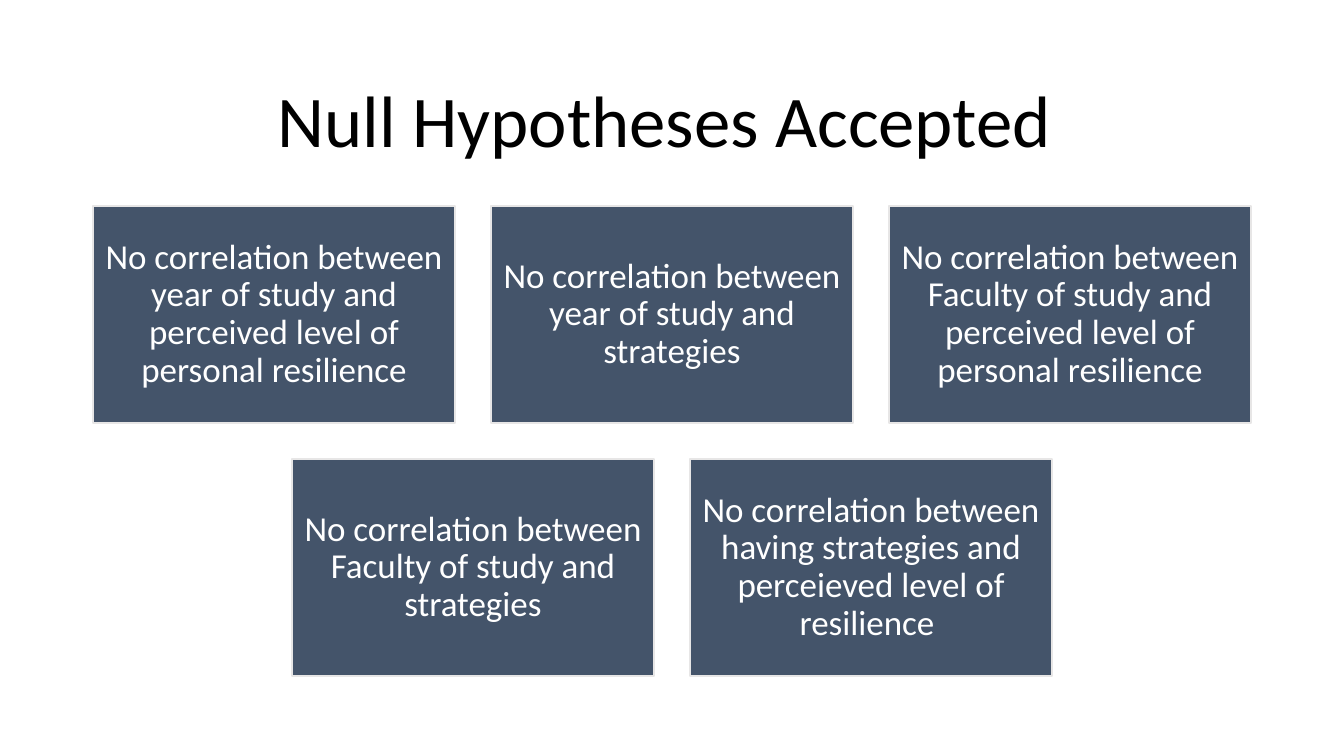
"""Build the slide of accepted null hypotheses as two centred rows of boxes."""
from pptx import Presentation
from pptx.dml.color import RGBColor
from pptx.enum.shapes import MSO_SHAPE as SHAPE
from pptx.enum.text import MSO_ANCHOR as ANCHOR, PP_ALIGN as ALIGN
from pptx.util import Pt

TITLE = "Null Hypotheses Accepted "
ROWS = [
    [
        "No correlation between year of study and perceived level of personal resilience",
        "No correlation between year of study and strategies",
        "No correlation between Faculty of study and perceived level of personal resilience",
    ],
    [
        "No correlation between Faculty of study and strategies",
        "No correlation between having strategies and perceieved level of resilience ",
    ],
]

BLACK = RGBColor(0x00, 0x00, 0x00)
WHITE = RGBColor(0xFF, 0xFF, 0xFF)
SLATE = RGBColor(0x44, 0x54, 0x6A)
PALE = RGBColor(0xE7, 0xE6, 0xE6)
FONT = "Calibri"

SLIDE_W, SLIDE_H = 1344, 756
TITLE_BOX = (93, 61, 1159, 125)
BOX_W, BOX_H, GAP, TOP, INSET = 362, 217, 36, 206, 10


def px(n):
    return round(n * 914400 / 100.8)


def write(sp, text, size, color):
    tf = sp.text_frame
    tf.word_wrap = True
    tf.vertical_anchor = ANCHOR.MIDDLE
    tf.margin_left = tf.margin_right = px(INSET)
    tf.margin_top = tf.margin_bottom = px(INSET)
    p = tf.paragraphs[0]
    p.text = text
    p.alignment = ALIGN.CENTER
    p.line_spacing = 0.9
    p.font.name = FONT
    p.font.size = Pt(size)
    p.font.color.rgb = color


def add_box(s, left, top, text):
    sp = s.shapes.add_shape(SHAPE.RECTANGLE, px(left), px(top), px(BOX_W), px(BOX_H))
    sp.shadow.inherit = False
    sp.fill.solid()
    sp.fill.fore_color.rgb = SLATE
    sp.line.color.rgb = PALE
    sp.line.width = Pt(1)
    write(sp, text, 25, WHITE)


def main():
    prs = Presentation()
    prs.slide_width, prs.slide_height = px(SLIDE_W), px(SLIDE_H)
    s = prs.slides.add_slide(prs.slide_layouts[6])
    write(s.shapes.add_textbox(*map(px, TITLE_BOX)), TITLE, 52, BLACK)
    for i, row in enumerate(ROWS):
        row_w = len(row) * (BOX_W + GAP) - GAP
        left = (SLIDE_W - row_w) // 2
        for j, text in enumerate(row):
            add_box(s, left + j * (BOX_W + GAP), TOP + i * (BOX_H + GAP), text)
    prs.save("out.pptx")


if __name__ == "__main__":
    main()
